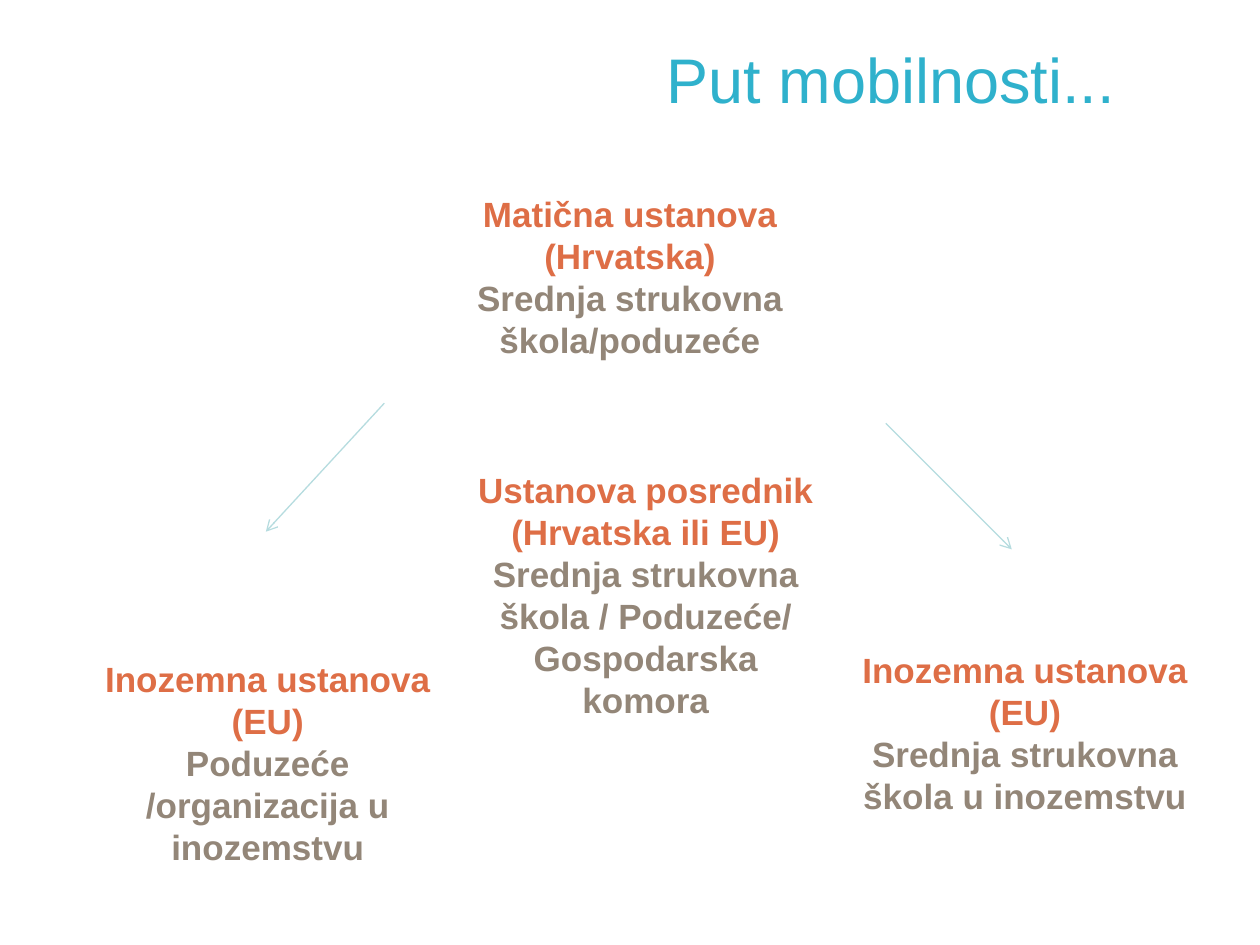
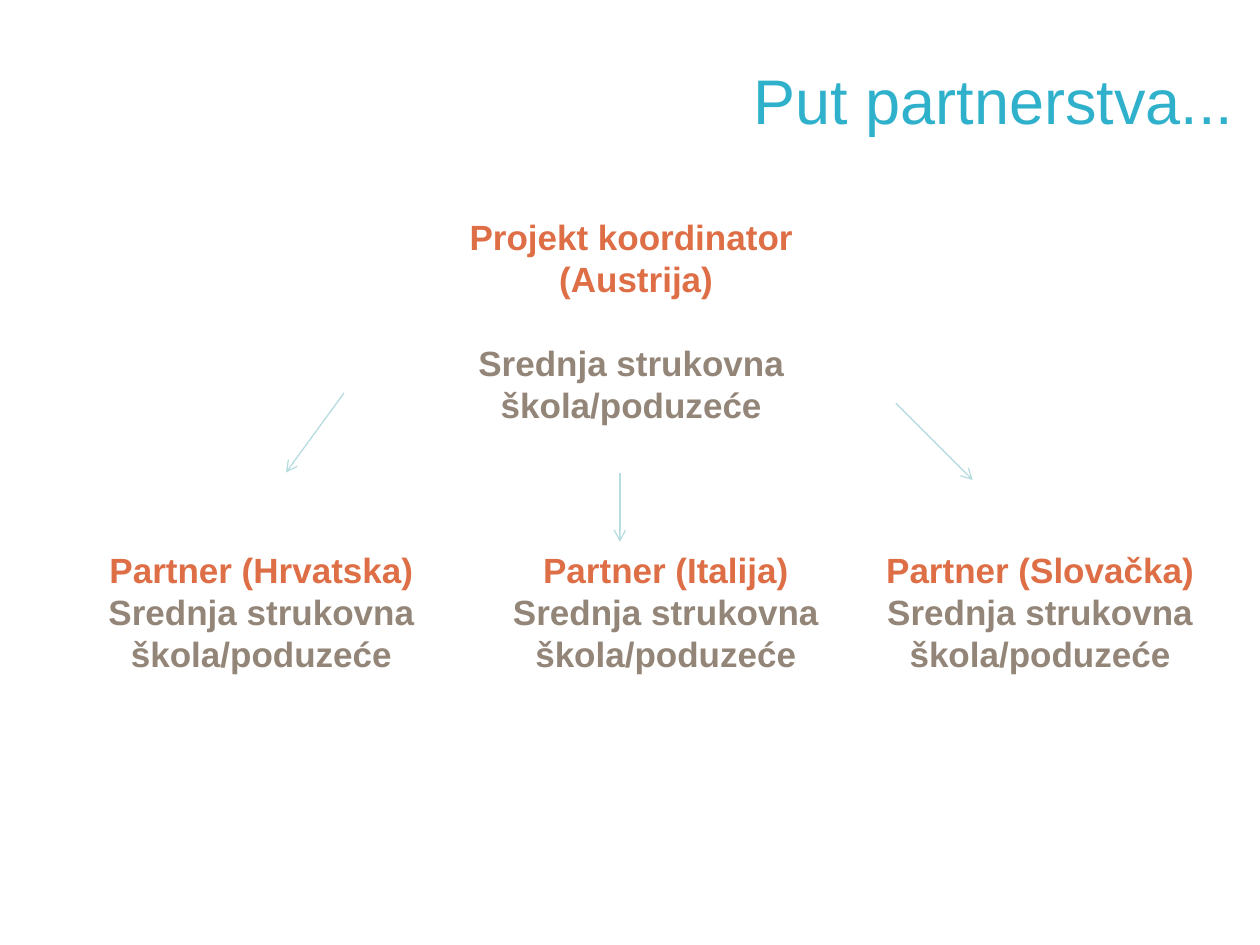
from lxml.etree import SubElement
from pptx import Presentation
from pptx.dml.color import RGBColor
from pptx.enum.shapes import MSO_CONNECTOR
from pptx.enum.text import MSO_ANCHOR, MSO_AUTO_SIZE, PP_ALIGN
from pptx.oxml.ns import qn
from pptx.util import Inches, Pt

TITLE_BLUE = RGBColor(0x2F, 0xB1, 0xCC)
ORANGE = RGBColor(0xDE, 0x6E, 0x46)
TAUPE = RGBColor(0x93, 0x86, 0x78)
ARROW_TEAL = RGBColor(0xB6, 0xDC, 0xDF)

WIDTH, HEIGHT = Inches(10), Inches(7.5)
COL, ROW = WIDTH / 100, HEIGHT / 75
LINE = Pt(24)
TITLE_FONT = {"name": "Arial", "size": Pt(36), "bold": False}
BODY_FONT = {"name": "Arial", "size": Pt(20), "bold": True}
SCHOOL = "Srednja strukovna škola/poduzeće"


def to_emu(*cells):
    """Turn alternating column and row counts into lengths."""
    return [round(n * (ROW if i % 2 else COL)) for i, n in enumerate(cells)]


def set_font(font, values, color):
    for name, value in values.items():
        setattr(font, name, value)
    font.color.rgb = color


def add_title_slide(prs, title, box):
    slide = prs.slides.add_slide(prs.slide_layouts[5])
    sp = slide.shapes.title
    sp.left, sp.top, sp.width, sp.height = to_emu(*box)
    tf = sp.text_frame
    tf.text = title
    tf.vertical_anchor = MSO_ANCHOR.MIDDLE
    p = tf.paragraphs[0]
    p.alignment = PP_ALIGN.RIGHT
    set_font(p.runs[0].font, TITLE_FONT, TITLE_BLUE)
    return slide


def add_institution(slide, box, headings, detail, gap=0):
    """Orange heading lines over a grey detail, with an optional gap between."""
    tf = slide.shapes.add_textbox(*to_emu(*box)).text_frame
    tf.word_wrap = True
    tf.auto_size = MSO_AUTO_SIZE.SHAPE_TO_FIT_TEXT
    lines = [(text, ORANGE) for text in headings] + [(detail, TAUPE)]
    for i, (text, color) in enumerate(lines):
        p = tf.add_paragraph() if i else tf.paragraphs[0]
        p.alignment = PP_ALIGN.CENTER
        p.line_spacing = LINE
        r = p.add_run()
        r.text = text
        set_font(r.font, BODY_FONT, color)
    p.space_before = gap


def add_arrow(slide, start, end):
    line = slide.shapes.add_connector(
        MSO_CONNECTOR.STRAIGHT, *to_emu(*start, *end))
    line.line.color.rgb = ARROW_TEAL
    line.line.width = Pt(0.75)
    SubElement(line.line._get_or_add_ln(), qn("a:tailEnd"), type="arrow")
    SubElement(line._element.spPr, qn("a:effectLst"))


def build_mobility(prs):
    slide = add_title_slide(prs, "Put mobilnosti...", (11.4, 2.1, 78.1, 8.2))
    add_institution(slide, (31.9, 14.8, 36.2, 14.5),
                    ["Matična ustanova (Hrvatska)"], SCHOOL)
    add_institution(slide, (6.7, 51.7, 29.1, 17.7),
                    ["Inozemna ustanova (EU)"],
                    "Poduzeće /organizacija u inozemstvu")
    add_institution(slide, (36.7, 36.7, 29.1, 24.3),
                    ["Ustanova posrednik (Hrvatska ili EU)"],
                    "Srednja strukovna škola / Poduzeće/ Gospodarska komora")
    add_institution(slide, (65.6, 51, 31.5, 17.9),
                    ["Inozemna ustanova", "(EU)"],
                    "Srednja strukovna škola u inozemstvu")
    add_arrow(slide, (70.3, 33.6), (80.3, 43.6))
    add_arrow(slide, (30.5, 32), (21.1, 42.2))


def build_partnership(prs):
    slide = add_title_slide(prs, "Put partnerstva...", (32, 1.6, 66.9, 12.5))
    add_institution(slide, (32, 16.6, 36.2, 17.9),
                    ["Projekt koordinator", " (Austrija)"], SCHOOL, gap=LINE)
    partners = {"Hrvatska": 6.2, "Italija": 38.3, "Slovačka": 68}
    for country, left in partners.items():
        add_institution(slide, (left, 43, 29.1, 11.1),
                        [f"Partner ({country})"], SCHOOL)
    add_arrow(slide, (71.1, 32), (77.2, 38.1))
    add_arrow(slide, (27.3, 31.2), (22.7, 37.5))
    add_arrow(slide, (49.2, 37.5), (49.2, 43))


def main():
    prs = Presentation()
    prs.slide_width, prs.slide_height = WIDTH, HEIGHT
    build_mobility(prs)
    build_partnership(prs)
    prs.save("out.pptx")


if __name__ == "__main__":
    main()
